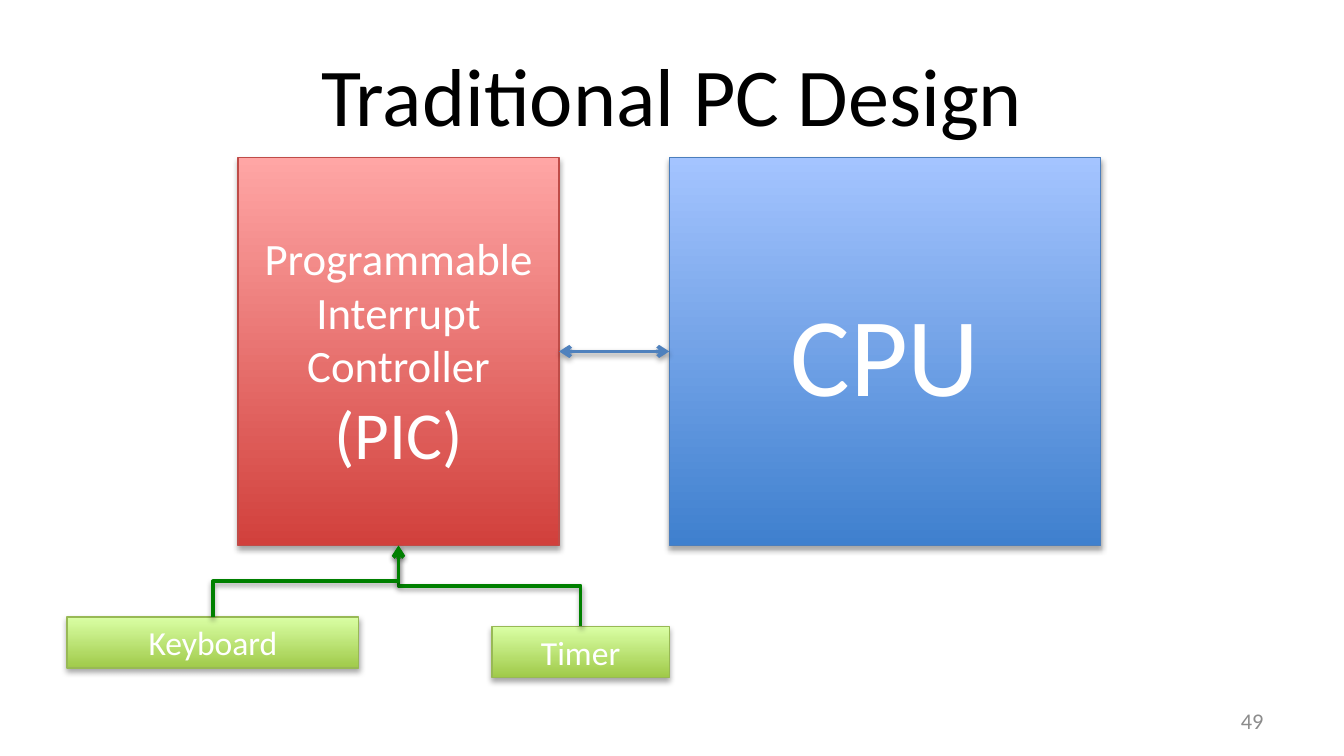
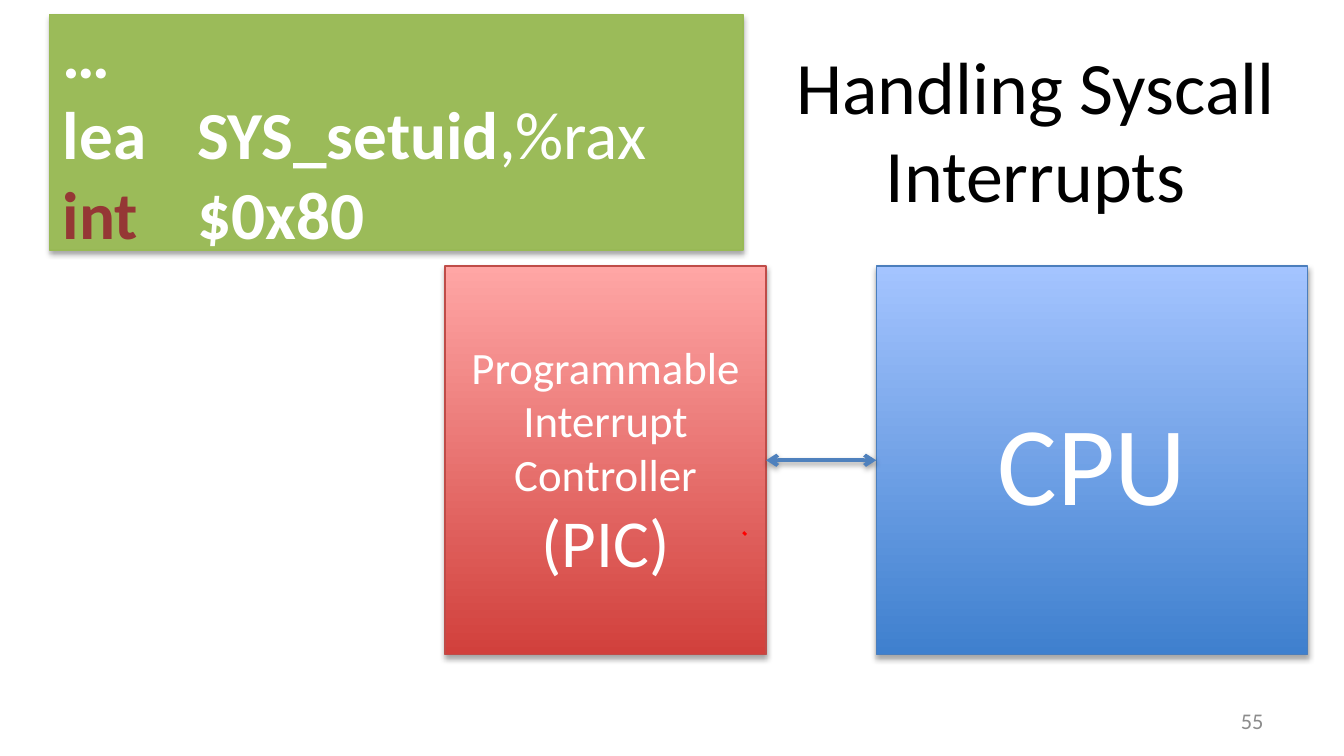
from lxml import etree
from pptx import Presentation
from pptx.dml.color import RGBColor
from pptx.enum.shapes import MSO_CONNECTOR, MSO_SHAPE
from pptx.enum.text import MSO_ANCHOR, MSO_AUTO_SIZE, PP_ALIGN
from pptx.oxml.ns import qn
from pptx.util import Inches, Pt

RECT = MSO_SHAPE.RECTANGLE
STRAIGHT, ELBOW = MSO_CONNECTOR.STRAIGHT, MSO_CONNECTOR.ELBOW
MIDDLE, NO_FIT = MSO_ANCHOR.MIDDLE, MSO_AUTO_SIZE.NONE
LEFT, CENTER, RIGHT = PP_ALIGN.LEFT, PP_ALIGN.CENTER, PP_ALIGN.RIGHT

FONT = "Calibri"
BLACK, WHITE, GRAY = "000000", "FFFFFF", "8C8C8C"
BROWN, RED, STEEL, GREEN = "953735", "FF0000", "4F81BD", "008000"
# Fill from bottom to top, then outline
BLUE_BOX = (("3F80CE", "A4C4FF"), "4B7EBC")
RED_BOX = (("D1403C", "FFA6A5"), "BF4C48")
LIME_BOX = (("A0CA4A", "DAFFA5"), "98B955")
CODE_BOX = (("9BBB59",), "98B955")


def color(code):
    return RGBColor.from_string(code)


def write(frame, text, size=18, ink=WHITE, bold=False, align=CENTER, join=False):
    """Add a run, in a new paragraph unless it joins the last one."""
    par = frame.paragraphs[-1]
    if par.runs and not join:
        par = frame.add_paragraph()
    par.alignment = align
    run = par.add_run()
    run.text = text
    font = run.font
    font.name, font.size, font.bold = FONT, Pt(size), bold
    font.color.rgb = color(ink)


def cast(effects, gap, alpha):
    """Put a soft shadow below a shape or line."""
    glow = etree.SubElement(effects, qn("a:outerShdw"), blurRad=str(Pt(3.1)),
                            dist=str(Pt(gap)), dir="5400000", rotWithShape="0")
    tint = etree.SubElement(glow, qn("a:srgbClr"), val=BLACK)
    etree.SubElement(tint, qn("a:alpha"), val=str(alpha * 1000))


class Deck:
    def __init__(self):
        self.show = Presentation()
        # Widescreen, 16 to 9
        self.show.slide_width = Inches(10)
        self.show.slide_height = Inches(10) * 9 // 16
        self.slide = None

    def page(self, title, number, area, size=44):
        self.slide = self.show.slides.add_slide(self.show.slide_layouts[5])
        head = self.slide.shapes.title
        head.left, head.top, head.width, head.height = map(Inches, area)
        self.frame(head)
        write(head.text_frame, title, size=size, ink=BLACK)
        foot = self.slide.shapes.add_textbox(
            *map(Inches, (7.17, 5.21, 2.33, 0.3)))
        self.frame(foot)
        write(foot.text_frame, str(number), size=12, ink=GRAY, align=RIGHT)

    def frame(self, shape):
        frame = shape.text_frame
        frame.word_wrap = True
        frame.auto_size = NO_FIT
        frame.vertical_anchor = MIDDLE

    def box(self, area, style):
        shape = self.slide.shapes.add_shape(RECT, *map(Inches, area))
        tones, edge = style
        if len(tones) == 1:
            shape.fill.solid()
            shape.fill.fore_color.rgb = color(tones[0])
        else:
            shape.fill.gradient()
            shape.fill.gradient_angle = 90
            for stop, tone, place in zip(shape.fill.gradient_stops, tones, (0, 1)):
                stop.color.rgb = color(tone)
                stop.position = place
        shape.line.color.rgb = color(edge)
        shape.line.width = Pt(0.75)
        shape.shadow.inherit = False
        cast(shape._element.spPr.find(qn("a:effectLst")), 1.8, 35)
        self.frame(shape)
        return shape

    def label(self, area, style, text, size):
        shape = self.box(area, style)
        write(shape.text_frame, text, size=size)
        return shape

    def line(self, kind, ends, ink, tips):
        link = self.slide.shapes.add_connector(kind, *ends)
        link.line.color.rgb = color(ink)
        link.line.width = Pt(2)
        props = link._element.spPr
        for tip in tips:
            etree.SubElement(props.find(qn("a:ln")), qn(tip), type="arrow")
        cast(etree.SubElement(props, qn("a:effectLst")), 1.6, 38)
        return link

    def wire(self, low, high):
        """Bent arrow from the top of one box up to the foot of another."""
        x1, y1 = low.left + low.width // 2, low.top
        x2, y2 = high.left + high.width // 2, high.top + high.height
        midx, midy = (x1 + x2) // 2, (y1 + y2) // 2
        run, rise = (x2 - x1) // 2, (y1 - y2) // 2
        ends = (midx - rise, midy - run, midx + rise, midy + run)
        link = self.line(ELBOW, ends, GREEN, ["a:tailEnd"])
        link._element.spPr.find(qn("a:xfrm")).set("rot", str(270 * 60000))

    def chips(self, left, top):
        """Interrupt controller and CPU, joined by a two-way arrow."""
        cpu = self.label((left + 3.21, top, 3.21, 2.89), BLUE_BOX, "CPU", 60)
        pic = self.label((left, top, 2.39, 2.89), RED_BOX,
                         "Programmable Interrupt Controller", 24)
        write(pic.text_frame, "(PIC)", size=36)
        link = self.line(STRAIGHT, (0, 0, 0, 0), STEEL, ["a:headEnd", "a:tailEnd"])
        link.begin_connect(pic, 3)
        link.end_connect(cpu, 1)
        return pic

    def mark(self, x, y, size):
        pen = self.slide.shapes.build_freeform(Inches(x), Inches(y))
        pen.add_line_segments([(Inches(x + size), Inches(y + size))], close=False)
        shape = pen.convert_to_shape()
        shape.fill.background()
        shape.line.color.rgb = color(RED)
        shape.line.width = Pt(1.5)
        shape.shadow.inherit = False


def main():
    deck = Deck()

    # Traditional design: devices feed the controller
    deck.page("Traditional PC Design", 49, (0.5, 0.23, 9, 0.94))
    pic = deck.chips(1.77, 1.17)
    for name, area in (("Timer", (3.66, 4.66, 1.32, 0.38)),
                       ("Keyboard", (0.5, 4.59, 2.17, 0.38))):
        deck.wire(deck.label(area, LIME_BOX, name, 18), pic)

    # System call: code listing above the chips
    deck.page("Handling Syscall Interrupts", 55, (5.69, 0.15, 4.03, 1.62), 39.6)
    code = deck.box((0.37, 0.11, 5.16, 1.75), CODE_BOX).text_frame
    for text, ink, bold, join in (("…", WHITE, True, False),
                                  ("lea\tSYS_setuid", WHITE, True, False),
                                  (",%rax", WHITE, False, True),
                                  ("int \t", BROWN, True, False),
                                  ("$0x80", WHITE, True, True)):
        write(code, text, size=36, ink=ink, bold=bold, align=LEFT, join=join)
    deck.chips(3.31, 1.98)
    deck.mark(5.53, 3.96, 0.02)

    deck.show.save("out.pptx")


if __name__ == "__main__":
    main()
